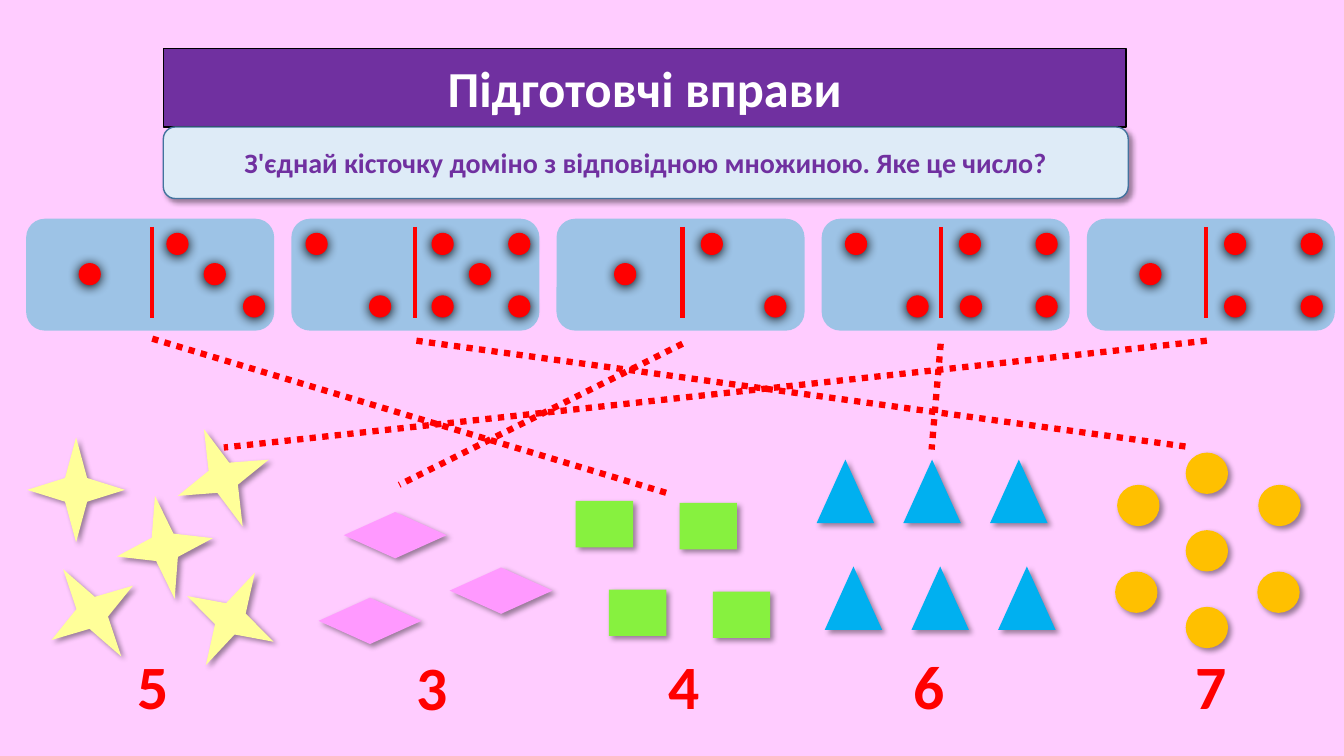
import dataclasses

import lxml.etree
import pptx
import pptx.dml.color
import pptx.enum.dml
import pptx.enum.shapes
import pptx.enum.text
import pptx.oxml.ns
import pptx.util

PX = 9144  # EMU in one px, 100 px to the inch
SHAPES = pptx.enum.shapes.MSO_SHAPE
ALIGN = pptx.enum.text.PP_ALIGN
ANCHOR = pptx.enum.text.MSO_ANCHOR


@dataclasses.dataclass(frozen=True)
class Theme:
    font: str = "Calibri"
    background: str = "FFCCFF"
    purple: str = "7030A0"
    white: str = "FFFFFF"
    black: str = "000000"
    red: str = "FF0000"
    task_fill: str = "DEEBF7"
    task_line: str = "43739E"
    domino: str = "9DC3E6"
    star: str = "FFFF99"
    diamond: str = "FF99FF"
    square: str = "87F13F"
    triangle: str = "00B0F0"
    circle: str = "FFC000"
    title_size: int = 36
    task_size: int = 20
    number_size: int = 44
    # Shadows: opacity in percent, blur and distance in points, angle in degrees
    dot_shadow: tuple = (100, 8.5, 1, 90)
    soft_shadow: tuple = (40, 4, 3, 45)


THEME = Theme()

# Dominoes: divider x, then the left edges of the dots in the top, middle and bottom rows
DOMINO_LEFT, DOMINO_STEP = 26, 263
DOT_ROWS = (231, 261, 293)
DOMINOES = (
    (151, ((165,), (78, 202), (241,))),
    (412, ((303, 428, 504), (465,), (366, 428, 504))),
    (677, ((695,), (609,), (758,))),
    (933, ((838, 951, 1027), (), (899, 952, 1027))),
    (1196, ((1214, 1290), (1130,), (1214, 1290))),
)

# Sets: preset, fill, width, height, then left, top and rotation of every member
SETS = (
    (SHAPES.STAR_4_POINT, THEME.star, 97, 104,
     ((27, 434, 0), (43, 556, 326.3), (115, 491, 349.2), (173, 422, 338.3), (180, 562, 27.9))),
    (SHAPES.DIAMOND, THEME.diamond, 102, 46,
     ((341, 508, 0), (446, 563, 0), (316, 593, 0))),
    (SHAPES.RECTANGLE, THEME.square, 57, 46,
     ((571, 497, 0), (674, 499, 0), (604, 585, 0), (707, 587, 0))),
    (SHAPES.ISOSCELES_TRIANGLE, THEME.triangle, 57, 63,
     tuple((left + 86 * column, top, 0)
           for left, top in ((810, 456), (818, 562)) for column in range(3))),
    (SHAPES.OVAL, THEME.circle, 42, 41,
     ((1176, 449, 0), (1176, 526, 0), (1176, 602, 0), (1106, 567, 0),
      (1108, 481, 0), (1247, 567, 0), (1248, 481, 0))),
)

MATCHES = (
    (151, 336, 661, 489),
    (413, 338, 1176, 443),
    (677, 341, 396, 481),
    (933, 341, 924, 446),
    (1197, 338, 222, 444),
)
NUMBERS = (("5", 127, 638), ("3", 403, 639), ("4", 653, 638), ("6", 896, 638), ("7", 1176, 638))


def emu(*lengths):
    return [pptx.util.Emu(length * PX) for length in lengths]


def rgb(value):
    return pptx.dml.color.RGBColor.from_string(value)


def apply_format(target, values):
    for name, value in values.items():
        setattr(target, name, value)


def add_shadow(shape, shadow):
    opacity, blur, distance, angle = shadow
    effects = shape._element.spPr.find(pptx.oxml.ns.qn("a:effectLst"))
    outer = lxml.etree.SubElement(
        effects, pptx.oxml.ns.qn("a:outerShdw"),
        blurRad=str(pptx.util.Pt(blur)), dist=str(pptx.util.Pt(distance)),
        dir=str(angle * 60000), algn="ctr", rotWithShape="0")
    color = lxml.etree.SubElement(outer, pptx.oxml.ns.qn("a:srgbClr"), val=THEME.black)
    lxml.etree.SubElement(color, pptx.oxml.ns.qn("a:alpha"), val=str(opacity * 1000))


def add_figure(page, preset, area, fill, line=None, shadow=None):
    shape = page.shapes.add_shape(preset, *emu(*area))
    shape.shadow.inherit = False
    shape.fill.solid()
    shape.fill.fore_color.rgb = rgb(fill)
    if line:
        shape.line.color.rgb = rgb(line)
        shape.line.width = pptx.util.Pt(1)
    else:
        shape.line.fill.background()
    if shadow:
        add_shadow(shape, shadow)
    return shape


def add_line(page, ends, width, dash=None):
    line = page.shapes.add_connector(pptx.enum.shapes.MSO_CONNECTOR.STRAIGHT, *emu(*ends))
    line.line.color.rgb = rgb(THEME.red)
    apply_format(line.line, {"width": pptx.util.Pt(width), "dash_style": dash})
    lxml.etree.SubElement(line._element.spPr, pptx.oxml.ns.qn("a:effectLst"))


def write(box, text, size, color, align=ALIGN.CENTER, anchor=ANCHOR.MIDDLE):
    apply_format(box.text_frame, {"word_wrap": True, "vertical_anchor": anchor})
    para = box.text_frame.paragraphs[0]
    para.alignment = align
    span = para.add_run()
    span.text = text
    apply_format(span.font, {"name": THEME.font, "size": pptx.util.Pt(size), "bold": True})
    span.font.color.rgb = rgb(color)


def add_domino(page, left, divider, rows):
    add_figure(page, SHAPES.ROUNDED_RECTANGLE, (left, 217, 246, 111), THEME.domino)
    add_line(page, (divider, 225, divider, 315), 3)
    for top, dots in zip(DOT_ROWS, rows):
        for dot in dots:
            add_figure(page, SHAPES.OVAL, (dot, top, 22, 22), THEME.red,
                       shadow=THEME.dot_shadow)


def add_set(page, preset, fill, width, height, places):
    for left, top, rotation in places:
        member = add_figure(page, preset, (left, top, width, height), fill,
                            shadow=THEME.soft_shadow)
        member.rotation = rotation
        if preset == SHAPES.STAR_4_POINT:
            member.adjustments[0] = 0.16


def add_number(page, text, left, top):
    box = page.shapes.add_textbox(*emu(left, top, 70, 84))
    write(box, text, THEME.number_size, THEME.red, ALIGN.LEFT, ANCHOR.TOP)
    box.text_frame.auto_size = pptx.enum.text.MSO_AUTO_SIZE.SHAPE_TO_FIT_TEXT


def main():
    deck = pptx.Presentation()
    deck.slide_width, deck.slide_height = emu(1333, 750)
    page = deck.slides.add_slide(deck.slide_layouts[6])
    page.background.fill.solid()
    page.background.fill.fore_color.rgb = rgb(THEME.background)

    # Title and task
    title = add_figure(page, SHAPES.RECTANGLE, (162, 48, 955, 78), THEME.purple, THEME.black)
    write(title, "Підготовчі вправи", THEME.title_size, THEME.white)
    task = add_figure(page, SHAPES.ROUNDED_RECTANGLE, (162, 126, 957, 71),
                      THEME.task_fill, THEME.task_line, THEME.soft_shadow)
    write(task, "З'єднай кісточку доміно з відповідною множиною. Яке це число?",
          THEME.task_size, THEME.purple)

    # Dominoes and the sets to match
    for index, (divider, rows) in enumerate(DOMINOES):
        add_domino(page, DOMINO_LEFT + index * DOMINO_STEP, divider, rows)
    for members in SETS:
        add_set(page, *members)

    # Matching lines and numbers
    for ends in MATCHES:
        add_line(page, ends, 4.5, pptx.enum.dml.MSO_LINE.ROUND_DOT)
    for number in NUMBERS:
        add_number(page, *number)

    deck.save("out.pptx")


if __name__ == "__main__":
    main()
